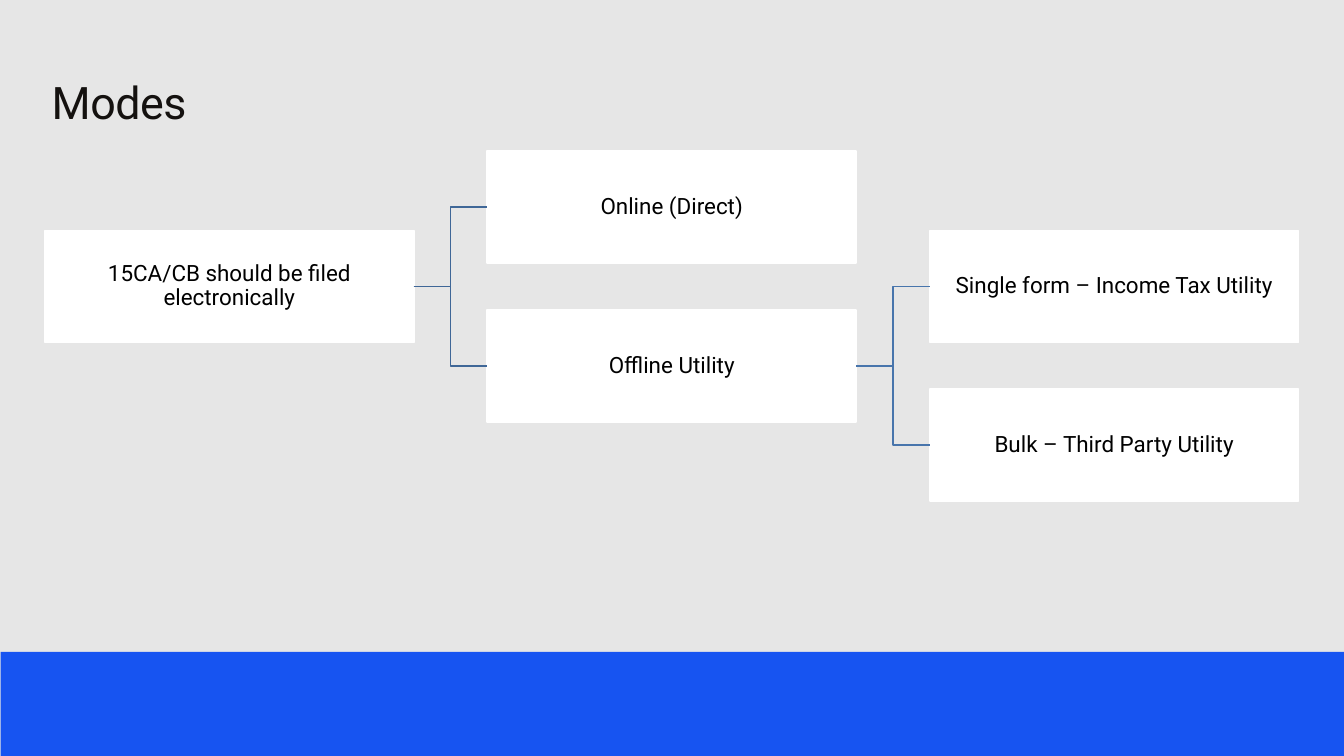
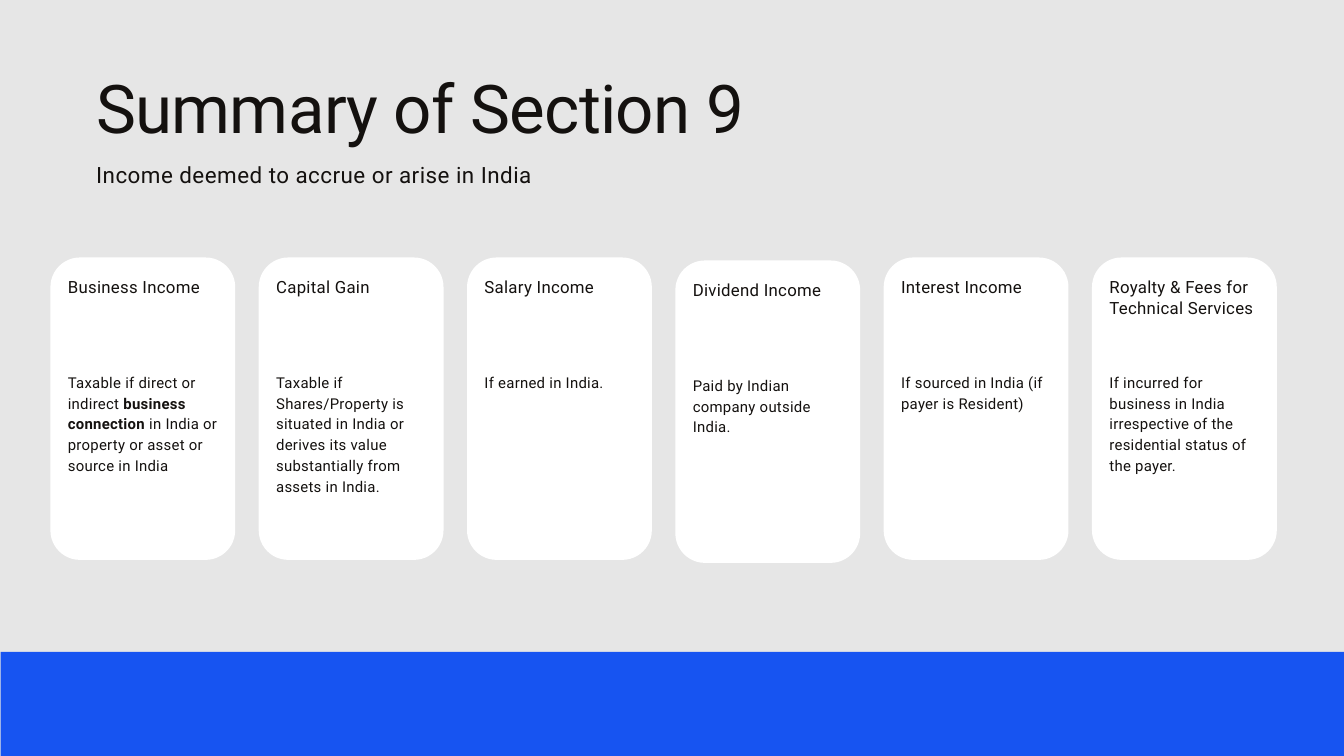
"""Build two slides: a tree of filing modes and a row of income cards."""
from dataclasses import dataclass

from lxml import etree
from pptx import Presentation
from pptx.dml.color import RGBColor
from pptx.enum.shapes import MSO_CONNECTOR, MSO_SHAPE
from pptx.enum.text import MSO_ANCHOR, MSO_AUTO_SIZE, PP_ALIGN
from pptx.oxml.ns import qn
from pptx.util import Pt

RECT = MSO_SHAPE.RECTANGLE
ROUND = MSO_SHAPE.ROUNDED_RECTANGLE
ELBOW = MSO_CONNECTOR.ELBOW
MIDDLE = MSO_ANCHOR.MIDDLE
GROW = MSO_AUTO_SIZE.SHAPE_TO_FIT_TEXT
CENTER = PP_ALIGN.CENTER

MODES = "Modes"
NODES = {
    "root": (0, 1, "15CA/CB should be filed electronically"),
    "online": (1, 0, "Online (Direct)"),
    "offline": (1, 2, "Offline Utility"),
    "single": (2, 1, "Single form – Income Tax Utility"),
    "bulk": (2, 3, "Bulk – Third Party Utility"),
}
LINKS = [
    ("root", "online", "3F6797"),
    ("root", "offline", "3F6797"),
    ("offline", "single", "4875AC"),
    ("offline", "bulk", "4875AC"),
]

SUMMARY = "Summary of Section 9"
SUBHEAD = "Income deemed to accrue or arise in India"
CARDS = [
    ("Business Income", 1, 5, [
        ("Taxable if direct or indirect ", False),
        ("business connection", True),
        (" in India or property or asset or source in India", False)]),
    ("Capital Gain", 1, 6, [
        ("Taxable if Shares/Property is situated in India or derives its "
         "value substantially from assets in India.", False)]),
    ("Salary Income", 1, 1, [("If earned in India.", False)]),
    ("Dividend Income", 1, 3, [
        ("Paid by Indian company outside India.", False)]),
    ("Interest Income", 1, 3, [
        ("If sourced in India (if payer is Resident)", False)]),
    ("Royalty & Fees for Technical Services", 2, 5, [
        ("If incurred for business in India irrespective of the "
         "residential status of the payer.", False)]),
]
LOWERED = {3: 3.2}


@dataclass(frozen=True)
class Theme:
    """Hold the shared colours, font and type sizes."""
    font: str = "Roboto"
    ground: str = "E6E6E6"
    band: str = "1754F1"
    white: str = "FFFFFF"
    black: str = "000000"
    ink: str = "14110F"
    hero: int = 72
    title: int = 48
    lead: int = 24
    head: int = 18
    body: int = 16


THEME = Theme()


def rgb(code):
    """Turn a hex code into a colour."""
    return RGBColor.from_string(code)


def add_box(slide, kind, area, fill, line=None):
    """Add a filled shape with no shadow."""
    box = slide.shapes.add_shape(kind, *map(Pt, area))
    box.shadow.inherit = False
    box.fill.solid()
    box.fill.fore_color.rgb = rgb(fill)
    if line:
        box.line.color.rgb = rgb(line)
        box.line.width = Pt(2)
    else:
        box.line.fill.background()
    return box


def set_inset(frame, inset):
    """Wrap the text and give all four sides one inset."""
    frame.word_wrap = True
    frame.margin_left = frame.margin_right = Pt(inset)
    frame.margin_top = frame.margin_bottom = Pt(inset)


def add_run(para, text, size, color, bold=False, track=0):
    """Add one styled run; track is letter spacing in points."""
    run = para.add_run()
    run.text = text
    font = run.font
    font.name, font.size, font.bold = THEME.font, Pt(size), bold
    font.color.rgb = rgb(color)
    if track:
        run.font._element.set("spc", str(round(track * 100)))


def add_text(slide, area, runs, size, lead, track):
    """Add a text box with a fixed line pitch."""
    frame = slide.shapes.add_textbox(*map(Pt, area)).text_frame
    set_inset(frame, 0)
    frame.auto_size = GROW
    para = frame.paragraphs[0]
    para.line_spacing = Pt(lead)
    for text, bold in runs:
        add_run(para, text, size, THEME.ink, bold, track)


def add_node(slide, col, row, text):
    """Add one tree box at its column and half-row."""
    area = (48.2 + 474 * col, 162 + 85 * row, 395, 120)
    box = add_box(slide, RECT, area, THEME.white, THEME.white)
    frame = box.text_frame
    set_inset(frame, 1.2)
    frame.vertical_anchor = MIDDLE
    para = frame.paragraphs[0]
    para.alignment = CENTER
    para.line_spacing = 0.9
    para.space_after = Pt(8.4)
    add_run(para, text, THEME.lead, THEME.black)
    return box


def add_link(slide, start, end, color):
    """Join the right side of one box to the left side of another."""
    link = slide.shapes.add_connector(ELBOW, 0, 0, 0, 0)
    link.begin_connect(start, 3)
    link.end_connect(end, 1)
    link.line.color.rgb = rgb(color)
    link.line.width = Pt(2)
    etree.SubElement(link._element.spPr, qn("a:effectLst"))


def add_card(slide, left, top, card):
    """Add a rounded card with its heading and note."""
    head, rows, lines, note = card
    box = add_box(slide, ROUND, (left, top, 198, 324), THEME.white)
    box.adjustments[0] = 0.16
    left += 18.7
    add_text(slide, (left, top + 20, 161.3, 22 * rows),
             [(head, False)], THEME.head, 22.4, 0.3)
    add_text(slide, (left, top + 120.8, 161.3, 22 * lines),
             note, THEME.body, 22.4, 0.3)


def new_slide(deck):
    """Add a blank slide with the shared ground and band."""
    slide = deck.slides.add_slide(deck.slide_layouts[6])
    fill = slide.background.fill
    fill.solid()
    fill.fore_color.rgb = rgb(THEME.ground)
    add_box(slide, RECT, (0.7, 698.4, 1439.3, 111.6), THEME.band)
    return slide


def build_modes(deck):
    """Build the tree of filing modes."""
    slide = new_slide(deck)
    boxes = {key: add_node(slide, *node) for key, node in NODES.items()}
    for start, end, color in LINKS:
        add_link(slide, boxes[start], boxes[end], color)
    add_text(slide, (55.4, 74.9, 908, 60.5),
             [(MODES, False)], THEME.title, 62.4, -0.5)


def build_cards(deck):
    """Build the row of income cards."""
    slide = new_slide(deck)
    add_text(slide, (103, 170.6, 862.6, 31),
             [(SUBHEAD, False)], THEME.lead, 31.2, 0.5)
    add_text(slide, (103, 71.3, 773.3, 87),
             [(SUMMARY, False)], THEME.hero, 86.4, -0.7)
    for i, card in enumerate(CARDS):
        add_card(slide, 54 + 223.2 * i, 275.9 + LOWERED.get(i, 0), card)


def main():
    """Make the deck and save it."""
    deck = Presentation()
    deck.slide_width, deck.slide_height = Pt(1440), Pt(810)
    build_modes(deck)
    build_cards(deck)
    deck.save("out.pptx")


if __name__ == "__main__":
    main()
